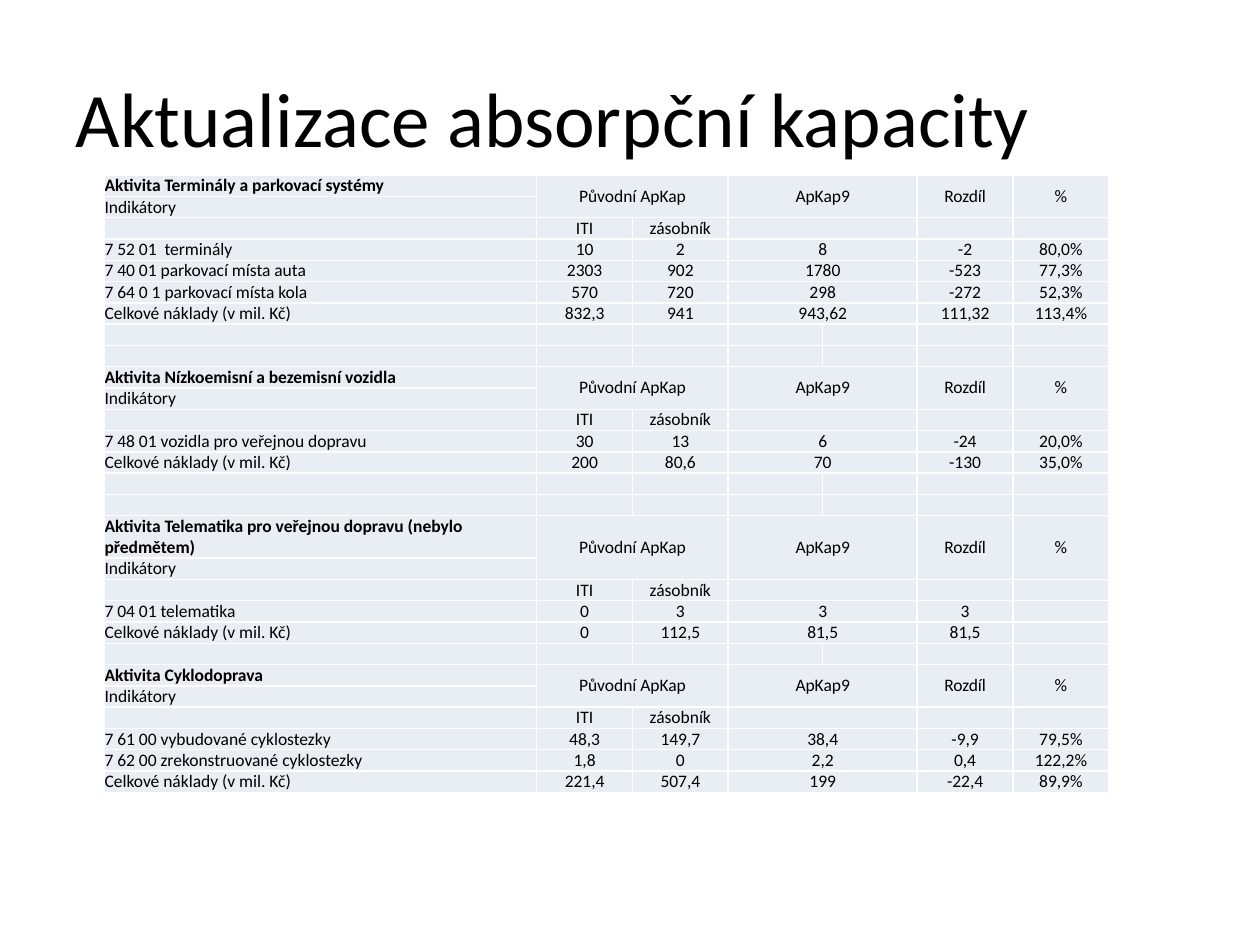
from lxml import etree
from pptx import Presentation
from pptx.dml.color import RGBColor
from pptx.enum.text import MSO_ANCHOR, PP_ALIGN
from pptx.oxml.ns import qn
from pptx.util import Inches, Pt

LEFT, CENTER = PP_ALIGN.LEFT, PP_ALIGN.CENTER
MIDDLE, BOTTOM = MSO_ANCHOR.MIDDLE, MSO_ANCHOR.BOTTOM
FONT, BLACK, WHITE, PALE = "Calibri", "000000", "FFFFFF", "E9EDF4"

TITLE = "Aktualizace absorpční kapacity"
HEAD = ["Původní ApKap", "", "ApKap9", "", "Rozdíl", "%"]
SUB = ["", "ITI", "zásobník", "", "", "", ""]
TOTAL = "Celkové náklady (v mil. Kč)"

# Activity, indicator rows (label, ITI, reserve, ApKap9, difference, %), blank rows after
GROUPS = [
    ("Aktivita Terminály a parkovací systémy", [
        ("7 52 01  terminály", "10", "2", "8", "-2", "80,0%"),
        ("7 40 01 parkovací místa auta", "2303", "902", "1780", "-523", "77,3%"),
        ("7 64 0 1 parkovací místa kola", "570", "720", "298", "-272", "52,3%"),
        (TOTAL, "832,3", "941", "943,62", "111,32", "113,4%"),
    ], 2),
    ("Aktivita Nízkoemisní a bezemisní vozidla", [
        ("7 48 01 vozidla pro veřejnou dopravu", "30", "13", "6", "-24", "20,0%"),
        (TOTAL, "200", "80,6", "70", "-130", "35,0%"),
    ], 2),
    ("Aktivita Telematika pro veřejnou dopravu (nebylo předmětem)", [
        ("7 04 01 telematika", "0", "3", "3", "3", ""),
        (TOTAL, "0", "112,5", "81,5", "81,5", ""),
    ], 1),
    ("Aktivita Cyklodoprava", [
        ("7 61 00 vybudované cyklostezky", "48,3", "149,7", "38,4", "-9,9", "79,5%"),
        ("7 62 00 zrekonstruované cyklostezky", "1,8", "0", "2,2", "0,4", "122,2%"),
        (TOTAL, "221,4", "507,4", "199", "-22,4", "89,9%"),
    ], 0),
]
COLS = [3.43, 0.76, 0.76, 0.75, 0.75, 0.76, 0.76]
ROW = 0.15


def color(code):
    return RGBColor.from_string(code)


def style(par, size, bold, align):
    par.alignment = align
    for run in par.runs:
        font = run.font
        font.name, font.size, font.bold = FONT, Pt(size), bold
        font.color.rgb = color(BLACK)


def border(cell):
    props = cell._tc.get_or_add_tcPr()
    for side in ("a:lnL", "a:lnR", "a:lnT", "a:lnB"):
        line = etree.SubElement(props, qn(side), w=str(Pt(1)))
        fill = etree.SubElement(line, qn("a:solidFill"))
        etree.SubElement(fill, qn("a:srgbClr"), val=WHITE)


def write(cell, text, bold, align, anchor):
    cell.margin_left = cell.margin_right = 0
    cell.margin_top = cell.margin_bottom = 0
    cell.vertical_anchor = anchor
    border(cell)
    cell.fill.solid()
    cell.fill.fore_color.rgb = color(PALE)
    cell.text_frame.text = text
    par = cell.text_frame.paragraphs[0]
    style(par, 10, bold, align)
    if not text:  # keeps empty rows as low as the others
        etree.SubElement(par._p, qn("a:endParaRPr"), sz="1000")


def layout():
    """Return the rows of text, the header row numbers and the merged areas."""
    rows, heads, spans = [], [], []
    for name, data, gap in GROUPS:
        top = len(rows)
        heads.append(top)
        rows += [[name, *HEAD], ["Indikátory"] + [""] * 6, SUB]
        rows += [[*item[:4], "", *item[4:]] for item in data]
        spans += [(top, 1, top + 1, 2), (top, 3, top + 1, 4),
                  (top, 5, top + 1, 5), (top, 6, top + 1, 6)]
        spans += [(row, 3, row, 4) for row in range(top + 2, len(rows))]
        rows += [[""] * 7] * gap
    return rows, heads, spans


def main():
    prs = Presentation()
    prs.slide_width, prs.slide_height = Inches(10), Inches(7.5)
    slide = prs.slides.add_slide(prs.slide_layouts[5])

    title = slide.shapes.title
    title.left, title.top = Inches(0.5), Inches(0.3)
    title.width, title.height = Inches(9), Inches(1.25)
    title.text_frame.text = TITLE
    title.text_frame.vertical_anchor = MIDDLE
    style(title.text_frame.paragraphs[0], 44, False, LEFT)

    rows, heads, spans = layout()
    table = slide.shapes.add_table(
        len(rows), len(COLS), Inches(0.83), Inches(1.39),
        Inches(sum(COLS)), Inches(ROW * len(rows))).table
    table.first_row = table.horz_banding = False
    for col, width in zip(table.columns, COLS):
        col.width = Inches(width)
    for r, row in enumerate(rows):
        table.rows[r].height = Inches(ROW)
        for c, text in enumerate(row):
            write(table.cell(r, c), text, r in heads and c == 0,
                  CENTER if c else LEFT,
                  MIDDLE if r in heads and c else BOTTOM)
    for top, left, bottom, right in spans:
        table.cell(top, left).merge(table.cell(bottom, right))

    prs.save("out.pptx")


if __name__ == "__main__":
    main()
